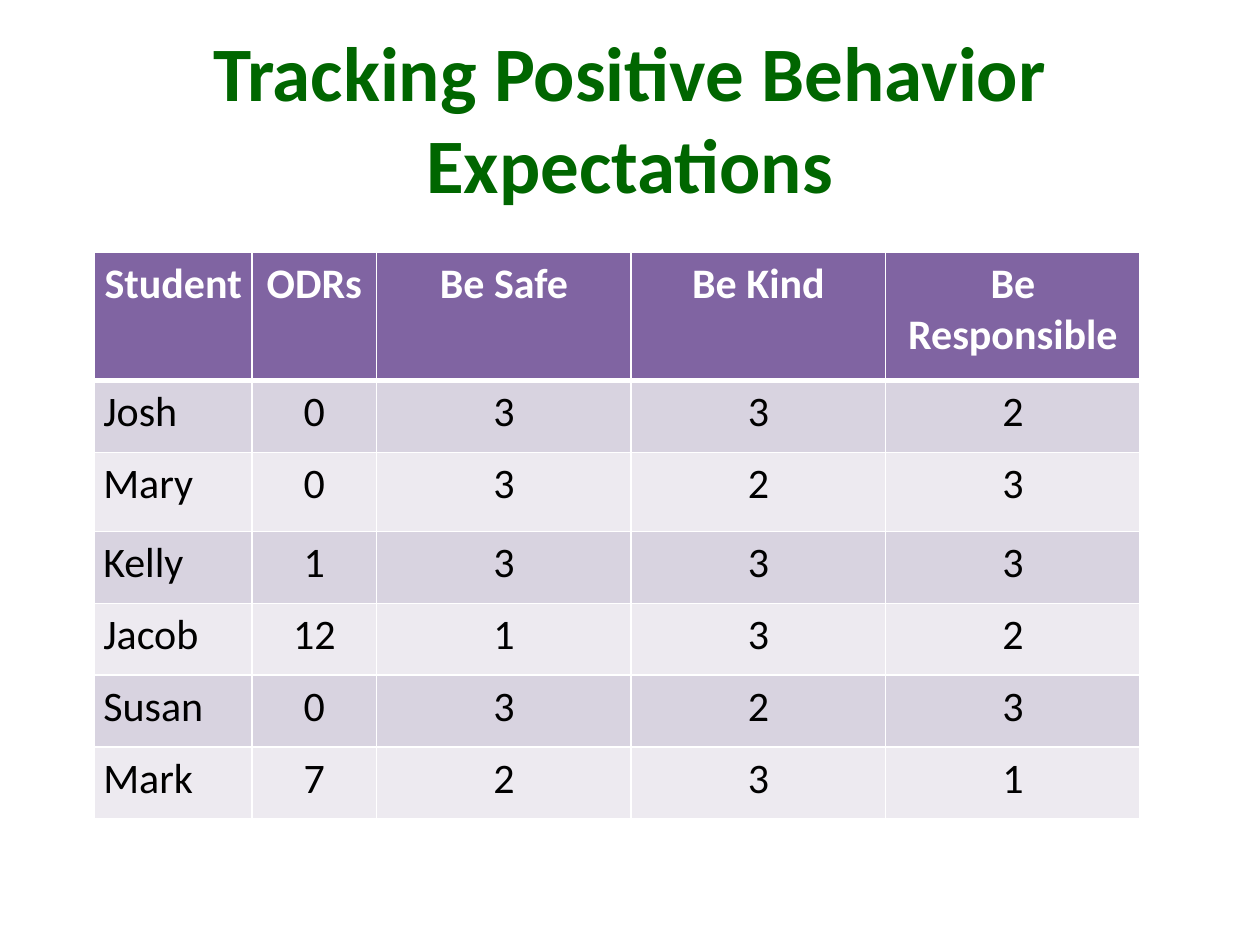
import lxml.etree
import pptx
import pptx.dml.color
import pptx.enum.text
import pptx.oxml.ns
import pptx.util

Inches = pptx.util.Inches
Pt = pptx.util.Pt
Align = pptx.enum.text.PP_ALIGN
Anchor = pptx.enum.text.MSO_ANCHOR
qn = pptx.oxml.ns.qn

COLORS = {
    "title": "006600", "head": "8064A2", "odd": "D8D3E0",
    "even": "EDEAF0", "white": "FFFFFF", "text": "000000",
}
FONTS = {
    "title": {"name": "Calibri", "size": Pt(44), "bold": True},
    "head": {"name": "Calibri", "size": Pt(24), "bold": True},
    "body": {"name": "Calibri", "size": Pt(24), "bold": False},
}
INSETS = {
    "margin_left": Inches(0.07), "margin_right": Inches(0.07),
    "margin_top": Inches(0.05), "margin_bottom": Inches(0.05),
}
WIDTHS = [1.25, 0.99] + [2.02] * 3
HEIGHTS = [1.02, 0.57, 0.63] + [0.57] * 4
ROWS = [
    ("Student", "ODRs", "Be Safe", "Be Kind", "Be Responsible"),
    ("Josh", 0, 3, 3, 2),
    ("Mary", 0, 3, 2, 3),
    ("Kelly", 1, 3, 3, 3),
    ("Jacob", 12, 1, 3, 2),
    ("Susan", 0, 3, 2, 3),
    ("Mark", 7, 2, 3, 1),
]


def apply(item, values):
    """Set each named attribute of an item."""
    for name, value in values.items():
        setattr(item, name, value)


def color(name):
    """Return a named colour."""
    return pptx.dml.color.RGBColor.from_string(COLORS[name])


def write(frame, text, style, tint, align):
    """Write one formatted paragraph into a text frame."""
    frame.text = text
    para = frame.paragraphs[0]
    para.alignment = align
    font = para.runs[0].font
    apply(font, FONTS[style])
    font.color.rgb = color(tint)


def edge(cell, side, width):
    """Draw a white border on one side of a cell."""
    props = cell._tc.get_or_add_tcPr()
    line = lxml.etree.SubElement(props, qn(f"a:ln{side}"), w=str(Pt(width)))
    fill = lxml.etree.SubElement(line, qn("a:solidFill"))
    lxml.etree.SubElement(fill, qn("a:srgbClr"), val=COLORS["white"])


def add_title(slide, box):
    """Place the slide title in its box."""
    title = slide.shapes.title
    apply(title, dict(zip(("left", "top", "width", "height"), box)))
    apply(title.text_frame, {"word_wrap": True, "vertical_anchor": Anchor.MIDDLE})
    write(title.text_frame, "Tracking Positive Behavior Expectations",
          "title", "title", Align.CENTER)


def fill_cell(cell, row, col):
    """Fill and format one cell of the score table."""
    head = row == 0
    apply(cell, INSETS)
    write(cell.text_frame, str(ROWS[row][col]), "head" if head else "body",
          "white" if head else "text",
          Align.CENTER if head or col else Align.LEFT)
    for side, width in zip("LRTB", (1, 1, 3 if row == 1 else 1, 3 if head else 1)):
        edge(cell, side, width)
    cell.fill.solid()
    cell.fill.fore_color.rgb = color("head" if head else "odd" if row % 2 else "even")


def add_scores(slide, box):
    """Place the table of student scores in its box."""
    table = slide.shapes.add_table(len(ROWS), len(WIDTHS), *box).table
    for col, width in zip(table.columns, WIDTHS):
        col.width = Inches(width)
    for row, height in zip(table.rows, HEIGHTS):
        row.height = Inches(height)
    for row in range(len(ROWS)):
        for col in range(len(WIDTHS)):
            fill_cell(table.cell(row, col), row, col)


def main():
    """Build and save the slide."""
    deck = pptx.Presentation()
    apply(deck, {"slide_width": Inches(10), "slide_height": Inches(7.5)})
    slide = deck.slides.add_slide(deck.slide_layouts[5])
    add_title(slide, [Inches(n) for n in (0.5, 0.3, 9, 1.25)])
    add_scores(slide, [Inches(n) for n in (0.75, 2, sum(WIDTHS), sum(HEIGHTS))])
    deck.save("out.pptx")


if __name__ == "__main__":
    main()
